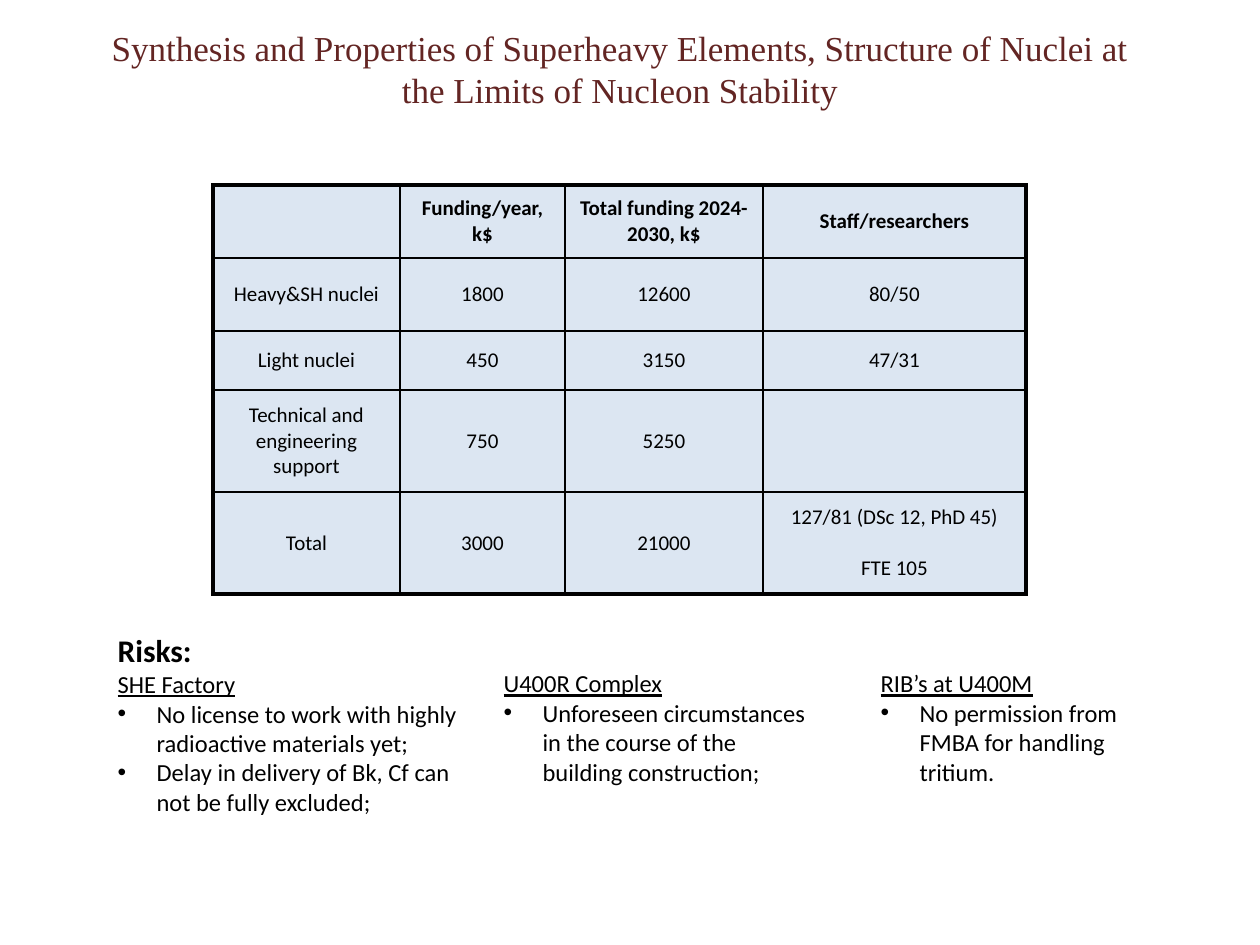
from pptx import Presentation, util as u
from pptx.dml.color import RGBColor
from pptx.enum import text as t
from pptx.oxml import parse_xml
from pptx.oxml.ns import nsdecls

SCALE = 914400 / 126


def px(n):
    return u.Emu(round(n * SCALE))


def rgb(code):
    return RGBColor.from_string(code)


class Deck:
    ink = "000000"
    pale = "DCE6F2"
    wine = "632523"
    sans = "Calibri"
    serif = "Times New Roman"
    indent = 39

    def __init__(self, wide, high):
        self.prs = Presentation()
        self.prs.slide_width = px(wide)
        self.prs.slide_height = px(high)
        self.slide = self.prs.slides.add_slide(self.prs.slide_layouts[4])
        self.bodies = list(self.slide.placeholders)[1:]

    def style(self, par, size, face=None, color=None, bold=False, line=False):
        font = par.font
        font.size = u.Pt(size)
        font.name = face or self.sans
        font.color.rgb = rgb(color or self.ink)
        font.bold = bold
        font.underline = line

    def place(self, shape, box):
        shape.left, shape.top, shape.width, shape.height = map(px, box)
        frame = shape.text_frame
        frame.word_wrap = True
        frame.auto_size = t.MSO_AUTO_SIZE.SHAPE_TO_FIT_TEXT
        frame.vertical_anchor = t.MSO_ANCHOR.TOP
        return frame

    def title(self, words, box):
        frame = self.place(self.slide.shapes.title, box)
        frame.text = words
        par = frame.paragraphs[0]
        par.alignment = t.PP_ALIGN.CENTER
        self.style(par, 20, self.serif, self.wine)

    def mark(self, par, bullet):
        props = par._p.get_or_add_pPr()
        gap = px(self.indent) if bullet else 0
        props.set("marL", str(gap))
        props.set("indent", str(-gap))
        tag = 'buChar char="•"' if bullet else "buNone"
        if bullet:
            props.append(parse_xml(f'<a:buFont {nsdecls("a")} typeface="Arial"/>'))
        props.append(parse_xml(f'<a:{tag} {nsdecls("a")}/>'))

    def risks(self, head, items, box, lead=None):
        frame = self.place(self.bodies.pop(0), box)
        lines = ([lead] if lead else []) + [head] + items
        frame.text = "\n".join(lines)
        for par, words in zip(frame.paragraphs, lines):
            self.mark(par, words in items)
            par.alignment = t.PP_ALIGN.LEFT
            par.space_before = u.Pt(0)
            top = words == lead
            self.style(par, 18 if top else 14, bold=top, line=words == head)

    def edge(self, cell, side, points):
        cell._tc.get_or_add_tcPr().append(parse_xml(
            f'<a:ln{side} {nsdecls("a")} w="{u.Pt(points)}"><a:solidFill>'
            f'<a:srgbClr val="{self.ink}"/></a:solidFill></a:ln{side}>'))

    def table(self, rows, left, top, wides, highs):
        frame = self.slide.shapes.add_table(
            len(highs), len(wides), px(left), px(top),
            px(sum(wides)), px(sum(highs)))
        grid = frame.table
        grid.first_row = grid.horz_banding = False
        for col, wide in zip(grid.columns, wides):
            col.width = px(wide)
        for row, high in zip(grid.rows, highs):
            row.height = px(high)
        for r, row in enumerate(rows):
            for c, words in enumerate(row):
                cell = grid.cell(r, c)
                outer = {"L": c == 0, "R": c == len(wides) - 1,
                         "T": r == 0, "B": r == len(highs) - 1}
                for side, thick in outer.items():
                    self.edge(cell, side, 2.25 if thick else 1)
                cell.fill.solid()
                cell.fill.fore_color.rgb = rgb(self.pale)
                cell.vertical_anchor = t.MSO_ANCHOR.MIDDLE
                cell.text = words
                for n, par in enumerate(cell.text_frame.paragraphs):
                    par.alignment = t.PP_ALIGN.CENTER
                    par.space_before = u.Pt(14.5 if n else 0)
                    self.style(par, 12, bold=r == 0)

    def save(self):
        for spare in self.bodies:
            spare.element.getparent().remove(spare.element)
        self.prs.save("out.pptx")


def main():
    deck = Deck(1260, 945)
    deck.table([
        ["", "Funding/year, k$", "Total funding 2024-2030, k$", "Staff/researchers"],
        ["Heavy&SH nuclei", "1800", "12600", "80/50"],
        ["Light nuclei", "450", "3150", "47/31"],
        ["Technical and engineering support", "750", "5250", ""],
        ["Total", "3000", "21000", "127/81 (DSc 12, PhD 45)\nFTE 105"],
    ], 213, 185, [187, 165, 198, 263], [73, 73, 59, 102, 102])
    deck.risks("SHE Factory", [
        "No license to work with highly radioactive materials yet;",
        "Delay in delivery of Bk, Cf can not be fully excluded;",
    ], (105, 625, 377, 199), "Risks:")
    deck.risks("U400R Complex", [
        "Unforeseen circumstances in the course of the building construction;",
    ], (491, 662, 328, 170))
    deck.risks("RIB’s at U400M", [
        "No permission from FMBA for handling tritium.",
    ], (868, 662, 318, 170))
    deck.title("Synthesis and Properties of Superheavy Elements, Structure of "
               "Nuclei at the Limits of Nucleon Stability", (79, 20, 1082, 97))
    deck.save()


if __name__ == "__main__":
    main()
